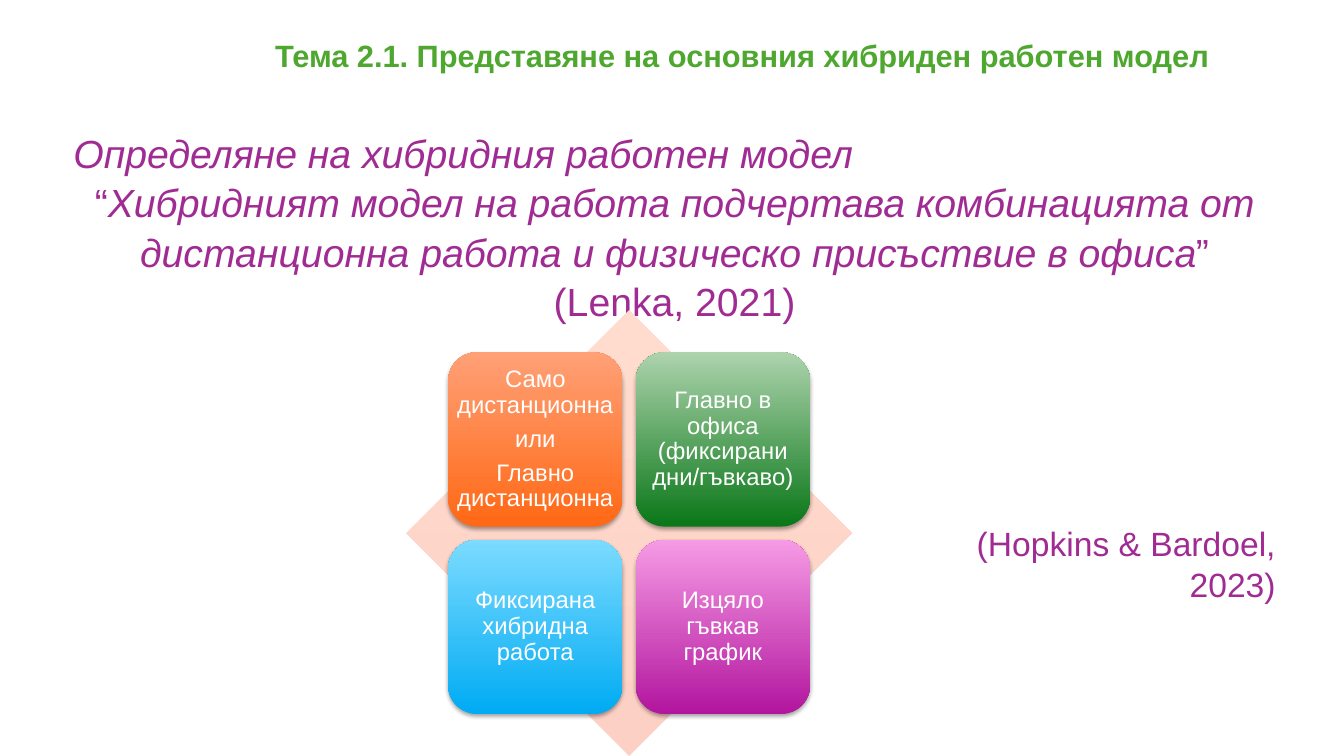
from dataclasses import dataclass

from lxml.etree import SubElement
from pptx import Presentation
from pptx.dml.color import RGBColor
from pptx.enum.shapes import MSO_SHAPE as Preset
from pptx.enum.text import MSO_ANCHOR as Anchor, PP_ALIGN as Align
from pptx.oxml.ns import qn
from pptx.shapes.autoshape import Shape
from pptx.shapes.shapetree import GroupShapes, SlideShapes
from pptx.text.text import TextFrame
from pptx.util import Inches, Pt


@dataclass(frozen=True)
class Theme:
    """Colours and type sizes of the slide."""
    font: str = "Arial"
    heading: str = "4EA72E"
    body: str = "A02B93"
    tile_text: str = "FFFFFF"
    shadow: str = "000000"
    diamond: tuple[str, str] = ("FCD0C5", "FFDCCE")
    heading_size: int = 22
    body_size: int = 28
    citation_size: int = 24
    tile_size: int = 17


@dataclass(frozen=True)
class Phrase:
    """Stretch of text in one slant."""
    text: str
    italic: bool = False


@dataclass(frozen=True)
class Line:
    """Paragraph made of phrases."""
    phrases: tuple[Phrase, ...]
    align: Align = Align.CENTER


@dataclass(frozen=True)
class WorkOption:
    """Tile of the matrix: its paragraphs and its gradient from bottom to top."""
    texts: tuple[str, ...]
    bottom: str
    top: str
    side_inset: float = 0.07


THEME = Theme()
CENTRE_X, CENTRE_Y = 6.24, 5.29
DIAMOND, TILE, GAP = 4.42, 1.73, 0.13

DEFINITION = [
    Line((Phrase("Определяне на хибридния работен модел", True),), Align.LEFT),
    Line((
        Phrase("“"),
        Phrase("Хибридният модел на работа подчертава комбинацията от "
               "дистанционна работа и физическо присъствие в офиса", True),
        Phrase("” (Lenka, 2021)"),
    )),
]

OPTIONS = [
    WorkOption(("Само дистанционна", "или", "Главно дистанционна"),
               "FF6815", "FFA076", side_inset=0),
    WorkOption(("Главно в офиса (фиксирани дни/гъвкаво)",), "0A7718", "ADD3AD"),
    WorkOption(("Фиксирана хибридна работа",), "00ABF3", "7CDBFF"),
    WorkOption(("Изцяло гъвкав график",), "B2159E", "F69BE5"),
]


def write_text(frame: TextFrame, lines: list[Line], *, size: int, color: str,
               bold: bool = False, spacing: float = 1.0, gap: float = 0,
               anchor: Anchor = Anchor.MIDDLE, inset_x: float = 0.1,
               inset_y: float = 0.05) -> None:
    """Fill a text frame with formatted paragraphs."""
    frame.word_wrap = True
    frame.vertical_anchor = anchor
    frame.margin_left = frame.margin_right = Inches(inset_x)
    frame.margin_top = frame.margin_bottom = Inches(inset_y)
    for index, line in enumerate(lines):
        paragraph = frame.add_paragraph() if index else frame.paragraphs[0]
        paragraph.alignment = line.align
        paragraph.line_spacing = spacing
        if index:
            paragraph.space_before = Pt(gap)
        for phrase in line.phrases:
            run = paragraph.add_run()
            run.text = phrase.text
            run.font.name = THEME.font
            run.font.size = Pt(size)
            run.font.bold = bold
            run.font.italic = phrase.italic
            run.font.color.rgb = RGBColor.from_string(color)


def add_text_frame(shapes: SlideShapes, left: float, top: float,
                   width: float, height: float) -> TextFrame:
    """Add a text box and return its frame."""
    box = shapes.add_textbox(Inches(left), Inches(top), Inches(width), Inches(height))
    return box.text_frame


def add_gradient_shape(shapes: GroupShapes, preset: Preset, left: float, top: float,
                       side: float, colors: tuple[str, str]) -> Shape:
    """Add a square preset shape with a gradient from bottom to top."""
    shape = shapes.add_shape(preset, Inches(left), Inches(top), Inches(side), Inches(side))
    shape.shadow.inherit = False
    shape.line.fill.background()
    shape.fill.gradient()
    shape.fill.gradient_angle = 90
    for stop, color, position in zip(shape.fill.gradient_stops, colors, (0, 1)):
        stop.color.rgb = RGBColor.from_string(color)
        stop.position = position
    return shape


def add_soft_shadow(shape: Shape) -> None:
    """Put a soft shadow below a shape."""
    effects = shape.element.spPr.find(qn("a:effectLst"))
    outer = SubElement(effects, qn("a:outerShdw"), blurRad=str(Pt(3.1)),
                       dist=str(Pt(1.8)), dir="5400000", rotWithShape="0")
    tint = SubElement(outer, qn("a:srgbClr"), val=THEME.shadow)
    SubElement(tint, qn("a:alpha"), val="35000")


def add_matrix(shapes: SlideShapes) -> None:
    """Draw the diamond with the four work options on it."""
    matrix = shapes.add_group_shape().shapes
    add_gradient_shape(matrix, Preset.DIAMOND, CENTRE_X - DIAMOND / 2,
                       CENTRE_Y - DIAMOND / 2, DIAMOND, THEME.diamond)
    offset = TILE + GAP / 2
    for index, option in enumerate(OPTIONS):
        row, column = divmod(index, 2)
        tile = add_gradient_shape(matrix, Preset.ROUNDED_RECTANGLE,
                                  CENTRE_X - offset + column * (TILE + GAP),
                                  CENTRE_Y - offset + row * (TILE + GAP),
                                  TILE, (option.bottom, option.top))
        add_soft_shadow(tile)
        write_text(tile.text_frame, [Line((Phrase(text),)) for text in option.texts],
                   size=THEME.tile_size, color=THEME.tile_text, spacing=0.9, gap=6,
                   inset_x=option.side_inset, inset_y=0.07)


def main() -> None:
    """Build the slide and save it."""
    deck = Presentation()
    deck.slide_width, deck.slide_height = Inches(13.33), Inches(7.5)
    shapes = deck.slides.add_slide(deck.slide_layouts[6]).shapes

    heading = Phrase("Тема 2.1. Представяне на основния хибриден работен модел")
    write_text(add_text_frame(shapes, 2.63, 0.3, 10.12, 0.5),
               [Line((heading,), Align.LEFT)],
               size=THEME.heading_size, color=THEME.heading, bold=True)
    write_text(add_text_frame(shapes, 0.63, 1.21, 12.12, 2), DEFINITION,
               size=THEME.body_size, color=THEME.body, spacing=1.05, anchor=Anchor.TOP)
    write_text(add_text_frame(shapes, 8.65, 5.34, 4.1, 0.5),
               [Line((Phrase("(Hopkins & Bardoel, 2023)"),), Align.RIGHT)],
               size=THEME.citation_size, color=THEME.body)
    add_matrix(shapes)
    deck.save("out.pptx")


if __name__ == "__main__":
    main()
